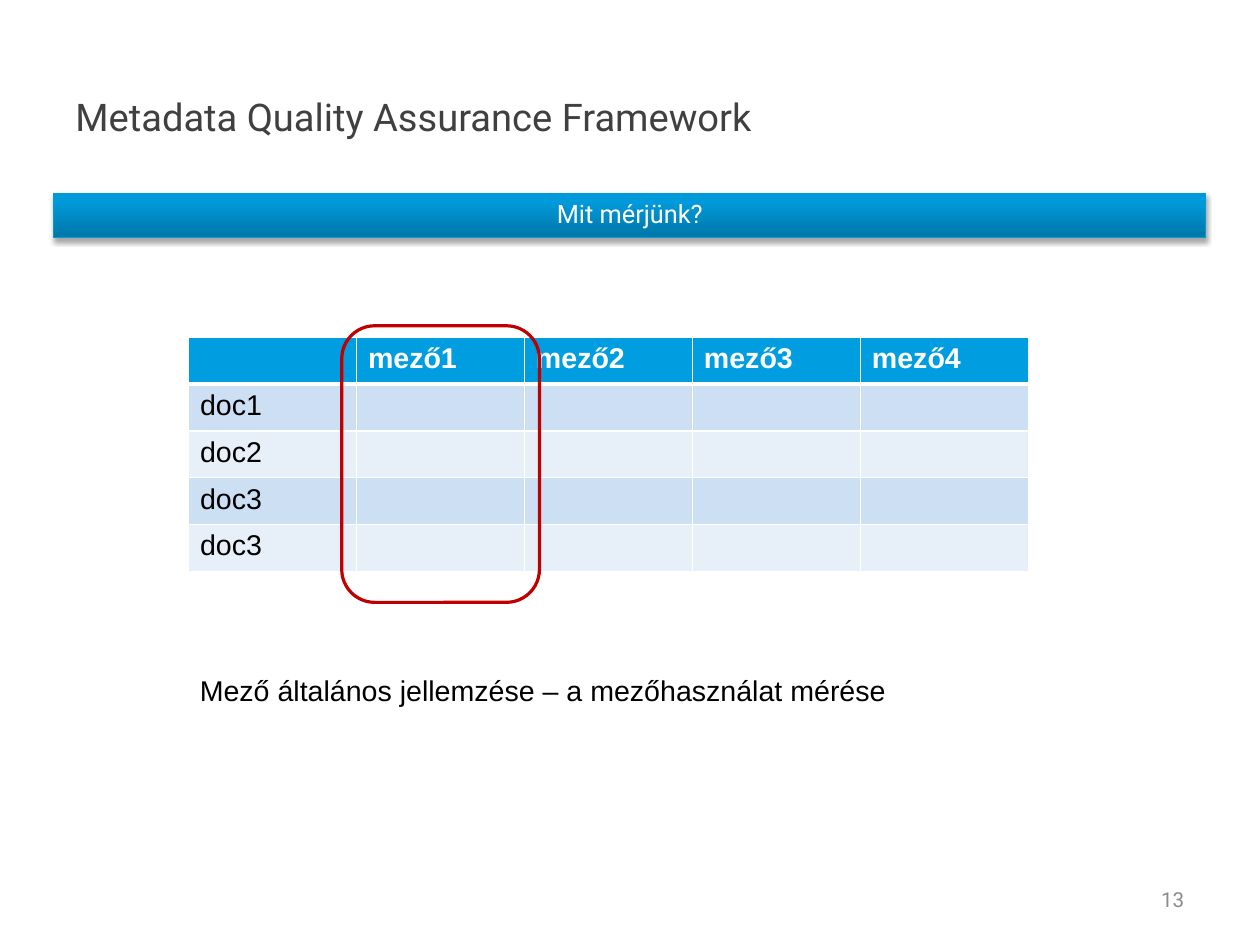
from lxml import etree
from pptx import Presentation
from pptx.dml.color import RGBColor
from pptx.enum.shapes import MSO_SHAPE as Shape
from pptx.enum.text import MSO_ANCHOR as Anchor, PP_ALIGN as Align
from pptx.oxml import parse_xml
from pptx.oxml.ns import nsdecls, qn
from pptx.util import Cm, Inches, Pt

WHITE = RGBColor(0xFF, 0xFF, 0xFF)
BLACK = RGBColor(0x00, 0x00, 0x00)
TITLE_GREY = RGBColor(0x40, 0x40, 0x40)
NUMBER_GREY = RGBColor(0x8C, 0x8C, 0x8C)
BANNER_DARK = RGBColor(0x00, 0x76, 0xA7)
BANNER_LIGHT = RGBColor(0x00, 0x99, 0xD9)
BANNER_EDGE = RGBColor(0x00, 0x9B, 0xDB)
HEADER_BLUE = RGBColor(0x00, 0x9E, 0xE0)
BANDS = RGBColor(0xCC, 0xDF, 0xF3), RGBColor(0xE7, 0xF0, 0xF9)
MARK_RED = RGBColor(0xC0, 0x00, 0x00)

TIGHT = 0.87
COLUMN, ROW = 1.47, 0.41
TABLE_LEFT, TABLE_TOP = 1.65, 2.95
FIELDS = ["", "mező1", "mező2", "mező3", "mező4"]
DOCUMENTS = ["doc1", "doc2", "doc3", "doc3"]


def inches(*lengths):
    return [Inches(length) for length in lengths]


def write(frame, text, size, font, color, bold=False, align=Align.LEFT, spacing=None):
    paragraph = frame.paragraphs[0]
    paragraph.alignment = align
    paragraph.line_spacing = spacing
    # An empty cell still needs its text size, which sets the row height.
    target = paragraph.add_run() if text else paragraph
    if text:
        target.text = text
    target.font.size = Pt(size)
    target.font.name = font
    target.font.bold = bold
    target.font.color.rgb = color


def add_label(slide, box, text, size, font, color, align=Align.LEFT,
              anchor=Anchor.TOP, margins=(0.1, 0.05), spacing=None):
    frame = slide.shapes.add_textbox(*inches(*box)).text_frame
    frame.word_wrap = True
    frame.vertical_anchor = anchor
    frame.margin_left = frame.margin_right = Inches(margins[0])
    frame.margin_top = frame.margin_bottom = Inches(margins[1])
    write(frame, text, size, font, color, align=align, spacing=spacing)


def add_banner(slide, box, text):
    """Gradient bar with a soft shadow below it."""
    banner = slide.shapes.add_shape(Shape.RECTANGLE, *inches(*box))
    banner.fill.gradient()
    banner.fill.gradient_angle = 90
    stops = zip(banner.fill.gradient_stops, (0, 0.8), (BANNER_DARK, BANNER_LIGHT))
    for stop, position, color in stops:
        stop.position = position
        stop.color.rgb = color
    banner.line.color.rgb = BANNER_EDGE
    banner.line.width = Pt(0.75)
    banner.shadow.inherit = False
    effects = banner.element.spPr.find(qn("a:effectLst"))
    effects.append(parse_xml(
        f'<a:outerShdw {nsdecls("a")} blurRad="{Pt(3.1)}" dist="{Pt(1.8)}" '
        'dir="5400000" rotWithShape="0"><a:srgbClr val="000000">'
        '<a:alpha val="35000"/></a:srgbClr></a:outerShdw>'))
    banner.text_frame.vertical_anchor = Anchor.MIDDLE
    write(banner.text_frame, text, 16, "Roboto", WHITE,
          align=Align.CENTER, spacing=TIGHT)


def set_borders(cell, **widths):
    properties = cell._tc.get_or_add_tcPr()
    for side in "LRTB":
        line = etree.SubElement(properties, qn(f"a:ln{side}"),
                                w=str(Pt(widths.get(side, 1))))
        fill = etree.SubElement(line, qn("a:solidFill"))
        etree.SubElement(fill, qn("a:srgbClr"), val=str(WHITE))


def add_field_table(slide, left, top):
    rows = [FIELDS] + [[name] + [""] * (len(FIELDS) - 1) for name in DOCUMENTS]
    box = inches(left, top, COLUMN * len(FIELDS), ROW * len(rows))
    table = slide.shapes.add_table(len(rows), len(FIELDS), *box).table
    table.horz_banding = False
    for r, texts in enumerate(rows):
        header = r == 0
        for c, text in enumerate(texts):
            cell = table.cell(r, c)
            cell.margin_top = Inches(0.08)
            cell.margin_bottom = Inches(0.02)
            set_borders(cell, B=3 if header else 1, T=3 if r == 1 else 1)
            cell.fill.solid()
            cell.fill.fore_color.rgb = HEADER_BLUE if header else BANDS[(r - 1) % 2]
            write(cell.text_frame, text, 18, "Arial", WHITE if header else BLACK,
                  bold=header, spacing=TIGHT)


def add_column_mark(slide, box):
    mark = slide.shapes.add_shape(Shape.ROUNDED_RECTANGLE, *inches(*box))
    mark.fill.background()
    mark.line.color.rgb = MARK_RED
    mark.line.width = Pt(2)
    mark.shadow.inherit = False


def main():
    deck = Presentation()
    deck.slide_width = Cm(28)
    deck.slide_height = Cm(21)
    slide = deck.slides.add_slide(deck.slide_layouts[6])

    add_label(slide, (0.55, 0.33, 6.96, 1.38), "Metadata Quality Assurance Framework",
              24, "Roboto", TITLE_GREY, anchor=Anchor.MIDDLE, margins=(0.11, 0.06))
    add_label(slide, (7.9, 7.65, 2.57, 0.44), "13", 13, "Roboto", NUMBER_GREY,
              align=Align.RIGHT, anchor=Anchor.MIDDLE, margins=(0.11, 0.06))
    add_banner(slide, (0.47, 1.69, 10.08, 0.39), "Mit mérjünk?")
    add_field_table(slide, TABLE_LEFT, TABLE_TOP)
    add_column_mark(slide, (TABLE_LEFT + COLUMN - 0.13, TABLE_TOP - 0.1,
                            COLUMN + 0.26, 2.42))
    add_label(slide, (TABLE_LEFT, 5.88, COLUMN * len(FIELDS), 0.36),
              "Mező általános jellemzése – a mezőhasználat mérése",
              18, "Arial", BLACK, spacing=TIGHT)
    deck.save("out.pptx")


if __name__ == "__main__":
    main()
